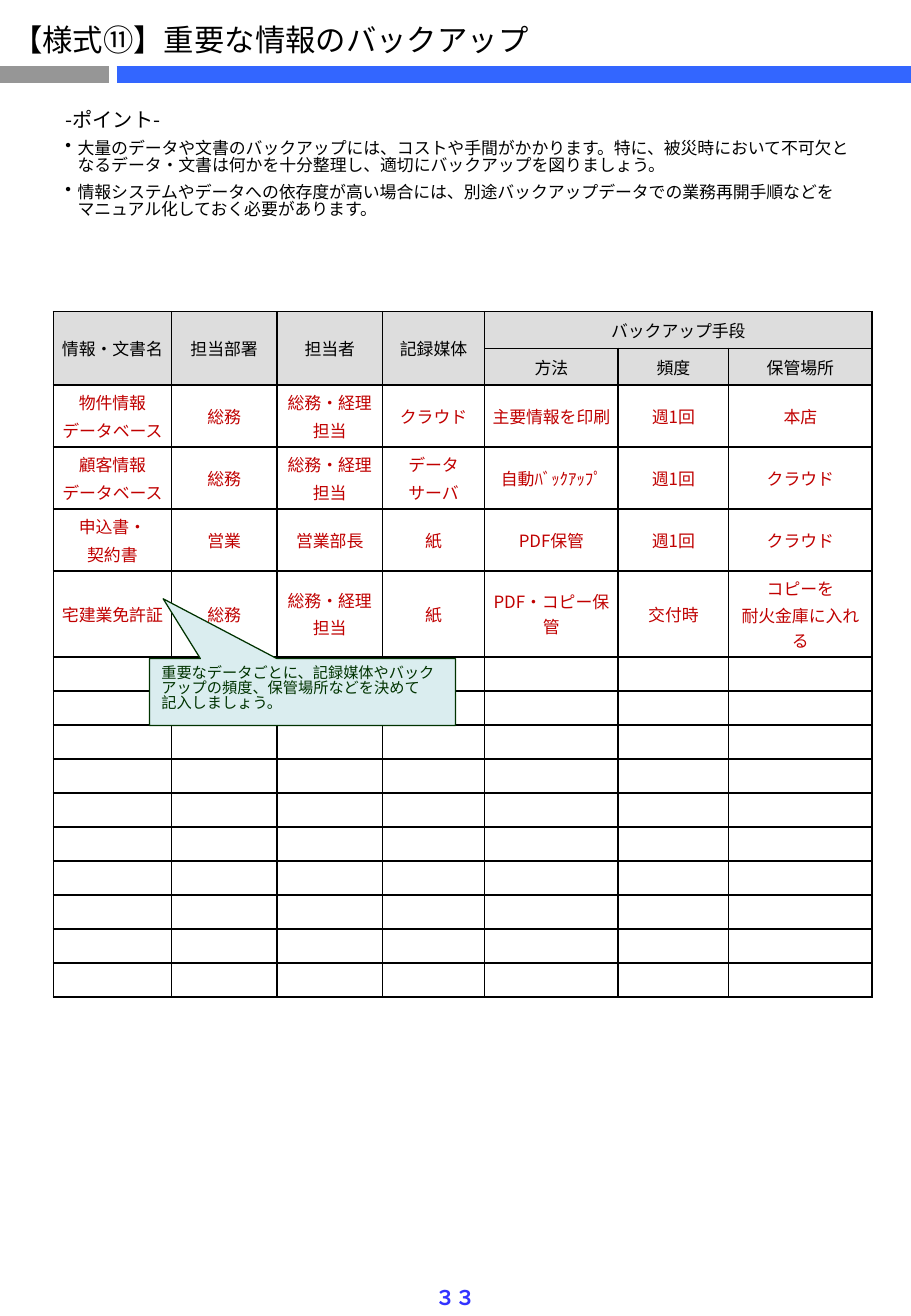
from lxml import etree
from pptx import Presentation
from pptx.dml.color import RGBColor
from pptx.enum.shapes import MSO_CONNECTOR, MSO_SHAPE
from pptx.enum.text import MSO_ANCHOR, PP_ALIGN
from pptx.oxml.ns import qn
from pptx.util import Pt

STRAIGHT = MSO_CONNECTOR.STRAIGHT
CALLOUT = MSO_SHAPE.RECTANGULAR_CALLOUT
TOP, MIDDLE = MSO_ANCHOR.TOP, MSO_ANCHOR.MIDDLE
LEFT, CENTER = PP_ALIGN.LEFT, PP_ALIGN.CENTER

FONT = "Noto Sans CJK JP"
BLACK = RGBColor(0x00, 0x00, 0x00)
GRAY = RGBColor(0x96, 0x96, 0x96)
BLUE = RGBColor(0x33, 0x66, 0xFF)
PAGE_BLUE = RGBColor(0x33, 0x33, 0xFF)
HEADER_GRAY = RGBColor(0xDD, 0xDD, 0xDD)
EXAMPLE_RED = RGBColor(0xC0, 0x00, 0x00)
NOTE_FILL = RGBColor(0xDA, 0xED, 0xEF)
NOTE_GREEN = RGBColor(0x00, 0x33, 0x00)

TIGHT = 0.83
COLUMN_WIDTHS = [69.84, 62.64, 62.64, 60.48, 79.2, 65.52, 84.96]
HEADINGS = ["情報・文書名", "担当部署", "担当者", "記録媒体", "バックアップ手段"]
SUBHEADINGS = ["方法", "頻度", "保管場所"]
EXAMPLES = [
    ["物件情報\nデータベース", "総務", "総務・経理\n担当", "クラウド",
     "主要情報を印刷", "週1回", "本店"],
    ["顧客情報\nデータベース", "総務", "総務・経理\n担当", "データ\nサーバ",
     "自動ﾊﾞｯｸｱｯﾌﾟ", "週1回", "クラウド"],
    ["申込書・\n契約書", "営業", "営業部長", "紙", "PDF保管", "週1回", "クラウド"],
    ["宅建業免許証", "総務", "総務・経理\n担当", "紙",
     "PDF・コピー保管", "交付時", "コピーを\n耐火金庫に入れる"],
]
BLANK_ROWS = 10
ROW_HEIGHTS = [21.8] * 2 + [36.7] * 3 + [50.4] + [20.16] * BLANK_ROWS
POINTS = [
    "大量のデータや文書のバックアップには、コストや手間がかかります。特に、被災時において"
    "不可欠となるデータ・文書は何かを十分整理し、適切にバックアップを図りましょう。",
    "情報システムやデータへの依存度が高い場合には、別途バックアップデータでの"
    "業務再開手順などを\nマニュアル化しておく必要があります。",
]


def style_paragraph(paragraph, size, color, align=LEFT, bold=False, spacing=TIGHT):
    paragraph.alignment = align
    paragraph.line_spacing = spacing
    for run in paragraph.runs:
        run.font.size = Pt(size)
        run.font.bold = bold
        run.font.name = FONT
        run.font.color.rgb = color
        latin = run.font._element.find(qn("a:latin"))
        east_asian = etree.Element(qn("a:ea"), typeface=FONT)
        latin.addnext(east_asian)


def place(shape, left, top, width, height):
    shape.left, shape.top = Pt(left), Pt(top)
    shape.width, shape.height = Pt(width), Pt(height)


def add_title(slide):
    title = slide.shapes.title
    place(title, 0, 12.5, 323.28, 28.8)
    title.text_frame.text = "【様式⑪】重要な情報のバックアップ"
    title.text_frame.word_wrap = False
    title.text_frame.vertical_anchor = TOP
    style_paragraph(title.text_frame.paragraphs[0], 18, BLACK)


def add_bar(slide, start, end, color):
    bar = slide.shapes.add_connector(STRAIGHT, Pt(start), Pt(44), Pt(end), Pt(44))
    bar.line.color.rgb = color
    bar.line.width = Pt(10)
    etree.SubElement(bar._element.spPr, qn("a:effectLst"))


def add_points(slide):
    box = slide.shapes.add_textbox(Pt(31.68), Pt(62.2), Pt(481.68), Pt(103))
    frame = box.text_frame
    frame.word_wrap = True
    for index, text in enumerate(["-ポイント-"] + POINTS):
        paragraph = frame.add_paragraph() if index else frame.paragraphs[0]
        paragraph.text = text
        style_paragraph(paragraph, 10 if index else 12, BLACK)
        paragraph.space_after = Pt(6)
        properties = paragraph._p.get_or_add_pPr()
        properties.set("marL", str(Pt(7.2)))
        properties.set("indent", str(-Pt(7.2)))
        if index:
            etree.SubElement(properties, qn("a:buChar"), char="•")


def format_cell(cell, fill, margin):
    cell.vertical_anchor = MIDDLE
    cell.margin_left = cell.margin_right = Pt(2.88)
    cell.margin_top = cell.margin_bottom = Pt(margin)
    properties = cell._tc.get_or_add_tcPr()
    for side in ("lnL", "lnR", "lnT", "lnB"):
        border = etree.SubElement(properties, qn(f"a:{side}"), w=str(Pt(1)))
        solid = etree.SubElement(border, qn("a:solidFill"))
        etree.SubElement(solid, qn("a:srgbClr"), val=str(BLACK))
    if fill is None:
        cell.fill.background()
    else:
        cell.fill.solid()
        cell.fill.fore_color.rgb = fill


def fill_cell(cell, text, color):
    cell.text_frame.text = text
    for index, paragraph in enumerate(cell.text_frame.paragraphs):
        style_paragraph(paragraph, 10, color, CENTER, spacing=1.0)
        if index:
            paragraph.space_before = Pt(2)
        if not text:
            etree.SubElement(paragraph._p, qn("a:endParaRPr"), sz="1000")


def add_backup_table(slide):
    frame = slide.shapes.add_table(
        len(ROW_HEIGHTS), len(COLUMN_WIDTHS), Pt(31.68), Pt(184.6),
        Pt(sum(COLUMN_WIDTHS)), Pt(sum(ROW_HEIGHTS)))
    table = frame.table
    table.first_row = table.horz_banding = False
    for column, width in zip(table.columns, COLUMN_WIDTHS):
        column.width = Pt(width)
    for row, height in zip(table.rows, ROW_HEIGHTS):
        row.height = Pt(height)

    blank = [""] * len(COLUMN_WIDTHS)
    contents = [HEADINGS + [""] * 2, [""] * 4 + SUBHEADINGS]
    contents += EXAMPLES + [blank] * BLANK_ROWS
    for r, texts in enumerate(contents):
        heading = r < 2
        for c, text in enumerate(texts):
            cell = table.cell(r, c)
            format_cell(cell, HEADER_GRAY if heading else None, 3.6 if heading else 2.88)
            fill_cell(cell, text, BLACK if heading else EXAMPLE_RED)
    for c in range(4):
        table.cell(0, c).merge(table.cell(1, c))
    table.cell(0, 4).merge(table.cell(0, 6))


def add_callout(slide):
    note = slide.shapes.add_shape(CALLOUT, Pt(88.56), Pt(390.24), Pt(181.44), Pt(39.6))
    note.adjustments[0], note.adjustments[1] = -0.455, -1.396
    note.shadow.inherit = False
    note.fill.solid()
    note.fill.fore_color.rgb = NOTE_FILL
    note.line.color.rgb = NOTE_GREEN
    note.line.width = Pt(0.75)
    frame = note.text_frame
    frame.word_wrap = True
    frame.vertical_anchor = TOP
    frame.margin_top = Pt(4.4)
    frame.text = ("重要なデータごとに、記録媒体やバックアップの頻度、保管場所などを決めて\n"
                  "記入しましょう。")
    for paragraph in frame.paragraphs:
        style_paragraph(paragraph, 9, NOTE_GREEN)


def add_page_number(slide):
    box = slide.shapes.add_textbox(Pt(250.56), Pt(760.6), Pt(38.88), Pt(19))
    box.text_frame.text = "３３"
    box.text_frame.word_wrap = False
    style_paragraph(box.text_frame.paragraphs[0], 12, PAGE_BLUE, CENTER, bold=True)


def main():
    deck = Presentation()
    deck.slide_width, deck.slide_height = Pt(540), Pt(779.76)
    slide = deck.slides.add_slide(deck.slide_layouts[5])
    add_title(slide)
    add_bar(slide, 0, 64.8, GRAY)
    add_bar(slide, 69.12, 540, BLUE)
    add_backup_table(slide)
    add_page_number(slide)
    add_points(slide)
    add_callout(slide)
    deck.save("out.pptx")


if __name__ == "__main__":
    main()
